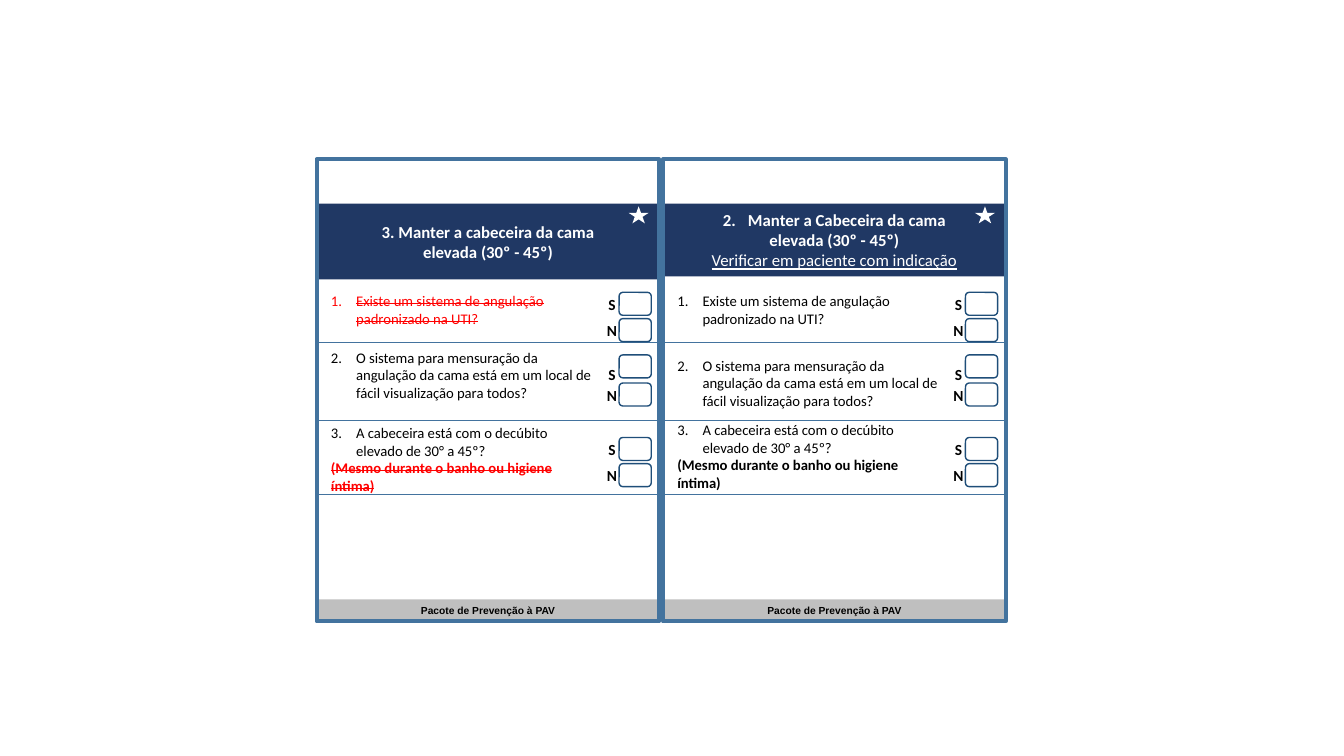
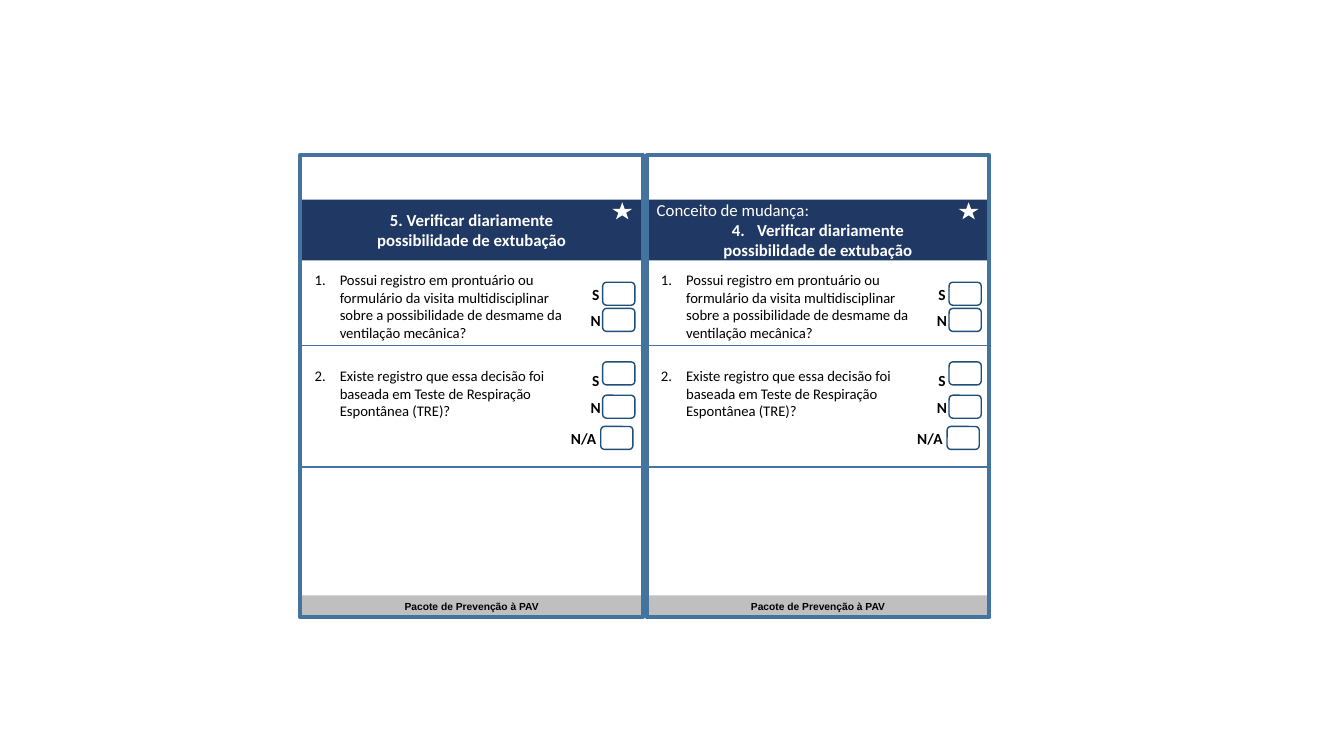
import dataclasses

import lxml.etree
import pptx
import pptx.dml.color
import pptx.enum.shapes
import pptx.enum.text
import pptx.oxml.ns
import pptx.util

Pt = pptx.util.Pt
RGBColor = pptx.dml.color.RGBColor
Shape = pptx.enum.shapes.MSO_SHAPE
Align = pptx.enum.text.PP_ALIGN
Anchor = pptx.enum.text.MSO_ANCHOR
qn = pptx.oxml.ns.qn

NAVY = RGBColor(0x20, 0x38, 0x64)
FRAME_BLUE = RGBColor(0x43, 0x73, 0x9E)
BOX_BLUE = RGBColor(0x1F, 0x4E, 0x79)
GRAY = RGBColor(0xBF, 0xBF, 0xBF)
WHITE = RGBColor(0xFF, 0xFF, 0xFF)
BLACK = RGBColor(0, 0, 0)
RED = RGBColor(0xFF, 0, 0)

CARD_WIDTH = 244.8
CARD_HEIGHT = 330
CARD_PITCH = 247.4
BAND_TOP = 31.7
FOOTER_HEIGHT = 15.6
INDENT = 18
CHECK_WIDTH = 23
CHECK_HEIGHT = 16.4


@dataclasses.dataclass
class Line:
    text: str
    number: int = 0
    gap: float = 0
    color: RGBColor = BLACK
    bold: bool = False
    underline: bool = False
    strike: bool = False
    align: int = Align.LEFT


def heading(text, number=0, bold=True, underline=False, align=Align.CENTER):
    return Line(text, number, color=WHITE, bold=bold, underline=underline, align=align)


def set_bullet(paragraph, number):
    properties = paragraph._p.get_or_add_pPr()
    properties.set("marL", str(Pt(INDENT if number else 0)))
    properties.set("indent", str(Pt(-INDENT if number else 0)))
    if number:
        lxml.etree.SubElement(properties, qn("a:buFont"), typeface="+mj-lt")
        bullet = lxml.etree.SubElement(properties, qn("a:buAutoNum"), type="arabicPeriod")
        if number > 1:
            bullet.set("startAt", str(number))
    else:
        lxml.etree.SubElement(properties, qn("a:buNone"))


def write_lines(shape, lines, size, font="Calibri", anchor=Anchor.MIDDLE, margin=0, wrap=True):
    frame = shape.text_frame
    frame.auto_size = pptx.enum.text.MSO_AUTO_SIZE.NONE
    frame.word_wrap = wrap
    frame.vertical_anchor = anchor
    frame.margin_left = frame.margin_right = Pt(margin)
    frame.margin_top = frame.margin_bottom = 0
    for index, line in enumerate(lines):
        paragraph = frame.add_paragraph() if index else frame.paragraphs[0]
        set_bullet(paragraph, line.number)
        paragraph.alignment = line.align
        paragraph.space_before = Pt(line.gap)
        paragraph.font.name = font
        paragraph.font.size = Pt(size)
        paragraph.font.bold = line.bold
        paragraph.font.underline = line.underline
        paragraph.font.color.rgb = line.color
        run = paragraph.add_run()
        run.text = line.text
        if line.strike:
            run._r.get_or_add_rPr().set("strike", "sngStrike")


def place(shape, left, top, width, height):
    shape.left, shape.top = Pt(left), Pt(top)
    shape.width, shape.height = Pt(width), Pt(height)


def add_shape(slide, kind, left, top, width, height, fill=None, line=None, line_width=1):
    shape = slide.shapes.add_shape(kind, Pt(left), Pt(top), Pt(width), Pt(height))
    shape.shadow.inherit = False
    if fill is None:
        shape.fill.background()
    else:
        shape.fill.solid()
        shape.fill.fore_color.rgb = fill
    if line is None:
        shape.line.fill.background()
    else:
        shape.line.color.rgb = line
        shape.line.width = Pt(line_width)
    return shape


def add_divider(slide, left, top):
    divider = slide.shapes.add_connector(
        pptx.enum.shapes.MSO_CONNECTOR.STRAIGHT, Pt(left), Pt(top), Pt(left + CARD_WIDTH), Pt(top))
    divider.line.color.rgb = FRAME_BLUE
    divider.line.width = Pt(1)
    lxml.etree.SubElement(divider._element.spPr, qn("a:effectLst"))


def add_answer(slide, left, top, label, check_top, label_center):
    wide = len(label) > 1
    check_left = left + (214.6 if wide else 216)
    add_shape(slide, Shape.ROUNDED_RECTANGLE, check_left, top + check_top,
              CHECK_WIDTH, CHECK_HEIGHT, line=BOX_BLUE)
    label_left, label_width = (180.8, 43.2) if wide else (202.4, 17.2)
    box = slide.shapes.add_textbox(Pt(left + label_left), Pt(top + label_center - 6),
                                   Pt(label_width), Pt(12))
    write_lines(box, [Line(label, bold=True, align=Align.CENTER)], 11, wrap=False)


def fill_header(shape, left, top, height, lines):
    place(shape, left, top, CARD_WIDTH, height)
    shape.fill.solid()
    shape.fill.fore_color.rgb = NAVY
    write_lines(shape, lines, 12, margin=7.2)


def add_card(slide, header, questions, left, top, card, form):
    fill_header(header, left, top + BAND_TOP, card["band"], card["heading"])
    place(questions, left + 3.4, top + form["list_top"], 201.6, form["list_height"])
    write_lines(questions, card["questions"], 10.5, anchor=Anchor.TOP, margin=6.8)
    footer_top = top + CARD_HEIGHT - FOOTER_HEIGHT
    footer = add_shape(slide, Shape.RECTANGLE, left, footer_top, CARD_WIDTH, FOOTER_HEIGHT, GRAY)
    write_lines(footer, [Line("Pacote de Prevenção à PAV", bold=True, align=Align.CENTER)],
                7.3, "Arial")
    for divider_top in form["dividers"]:
        add_divider(slide, left, top + divider_top)
    for answer in form["answers"]:
        add_answer(slide, left, top, *answer)
    add_shape(slide, Shape.STAR_5_POINT, left + 222.8, top + 33.6, 14.4, 12.2, WHITE)
    add_shape(slide, Shape.RECTANGLE, left, top, CARD_WIDTH, CARD_HEIGHT,
              line=FRAME_BLUE, line_width=3)


def add_form_slide(presentation, form):
    slide = presentation.slides.add_slide(presentation.slide_layouts[4])
    holders = {holder.placeholder_format.idx: holder for holder in slide.placeholders}
    left, top = form["origin"]
    for index, (header, questions) in enumerate([(0, 2), (1, 4)]):
        add_card(slide, holders[header], holders[questions], left + index * CARD_PITCH, top,
                 form["cards"][index], form)
    unused = holders[3]._element
    unused.getparent().remove(unused)


def headboard_questions(gaps, **revision):
    return [
        Line("Existe um sistema de angulação padronizado na UTI?", 1, **revision),
        Line("O sistema para mensuração da angulação da cama está em um local de fácil "
             "visualização para todos?", 1, gaps[0]),
        Line("A cabeceira está com o decúbito elevado de 30° a 45º?", 1, gaps[1]),
        Line("(Mesmo durante o banho ou higiene íntima)", bold=True, **revision),
    ]


EXTUBATION_QUESTIONS = [
    Line("Possui registro em prontuário ou formulário da visita multidisciplinar sobre a "
         "possibilidade de desmame da ventilação mecânica?", 1),
    Line("Existe registro que essa decisão foi baseada em Teste de Respiração "
         "Espontânea (TRE)?", 1, 18),
]

HEADBOARD_FORM = {
    "origin": (226.2, 113.8),
    "list_top": 94.8,
    "list_height": 144,
    "dividers": [131, 186.5, 239.4],
    "answers": [("S", 95, 103.3), ("N", 113.8, 122.4),
                ("S", 139.7, 153.7), ("N", 159.8, 168.5),
                ("S", 198.7, 207), ("N", 217.4, 226)],
    "cards": [
        {"band": 54,
         "heading": [heading("3. Manter a cabeceira da cama"), heading("elevada (30º - 45º)")],
         "questions": headboard_questions((15.2, 16), color=RED, strike=True)},
        {"band": 52,
         "heading": [heading("Manter a Cabeceira da cama", 2), heading("elevada (30º - 45º)"),
                     heading("Verificar em paciente com indicação", bold=False, underline=True)],
         "questions": headboard_questions((21, 8))},
    ],
}

EXTUBATION_FORM = {
    "origin": (214.5, 110.9),
    "list_top": 82.7,
    "list_height": 130,
    "dividers": [136, 222.8],
    "answers": [("S", 90.7, 99), ("N", 109.4, 118),
                ("S", 147.6, 160.9), ("N", 171.4, 180), ("N/A", 193.7, 202.3)],
    "cards": [
        {"band": 43.4,
         "heading": [heading("5. Verificar diariamente"), heading("possibilidade de extubação")],
         "questions": EXTUBATION_QUESTIONS},
        {"band": 43.4,
         "heading": [heading("Conceito de mudança:", bold=False, align=Align.LEFT),
                     heading("Verificar diariamente", 4), heading("possibilidade de extubação")],
         "questions": EXTUBATION_QUESTIONS},
    ],
}


def main():
    presentation = pptx.Presentation()
    presentation.slide_width, presentation.slide_height = Pt(960), Pt(540)
    for form in (HEADBOARD_FORM, EXTUBATION_FORM):
        add_form_slide(presentation, form)
    presentation.save("out.pptx")


if __name__ == "__main__":
    main()
